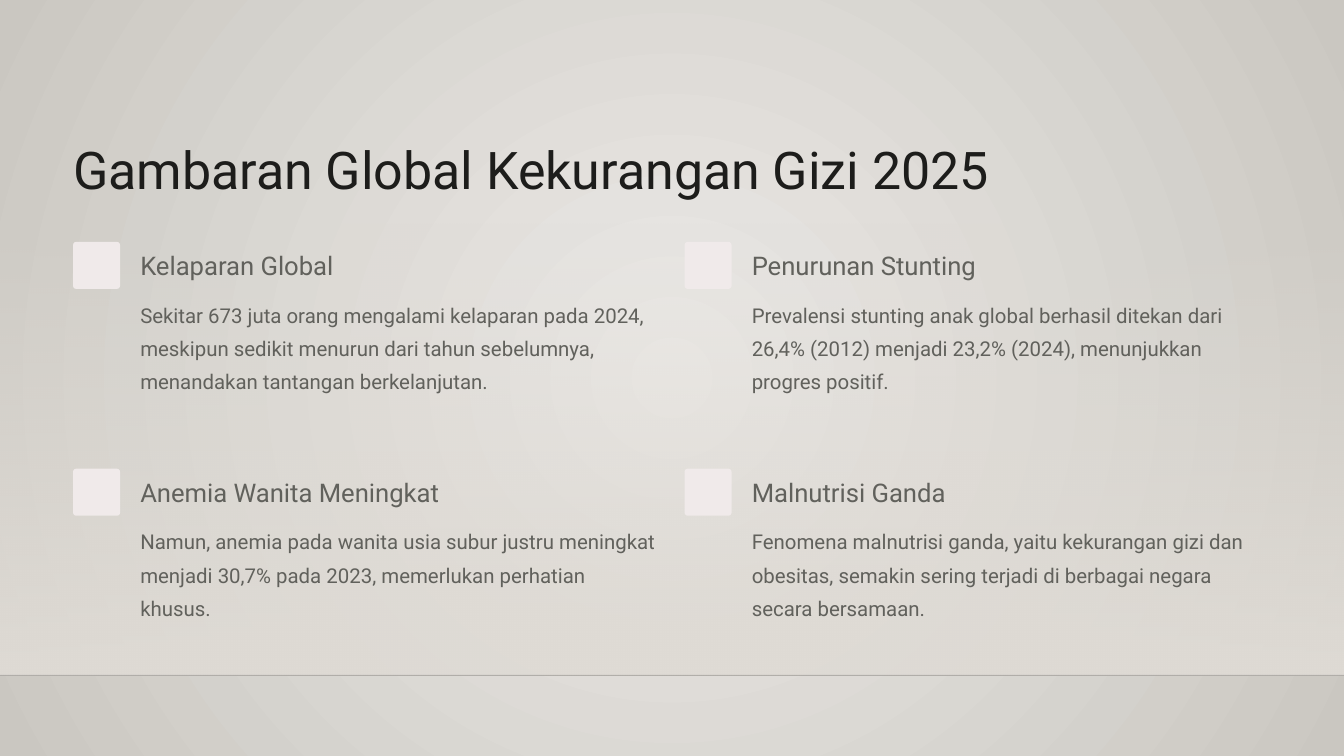
"""Build a slide with four facts about global malnutrition in a two by two grid."""
from pptx import Presentation, util as u
from pptx.dml.color import RGBColor
from pptx.enum import shapes, text
from pptx.oxml import parse_xml
from pptx.oxml.ns import nsdecls, qn

TITLE = "Gambaran Global Kekurangan Gizi 2025"
FACTS = [
    ("Kelaparan Global",
     "Sekitar 673 juta orang mengalami kelaparan pada 2024, meskipun sedikit menurun "
     "dari tahun sebelumnya, menandakan tantangan berkelanjutan."),
    ("Penurunan Stunting",
     "Prevalensi stunting anak global berhasil ditekan dari 26,4% (2012) menjadi "
     "23,2% (2024), menunjukkan progres positif."),
    ("Anemia Wanita Meningkat",
     "Namun, anemia pada wanita usia subur justru meningkat menjadi 30,7% pada 2023, "
     "memerlukan perhatian khusus."),
    ("Malnutrisi Ganda",
     "Fenomena malnutrisi ganda, yaitu kekurangan gizi dan obesitas, semakin sering "
     "terjadi di berbagai negara secara bersamaan."),
]
FONT, INK, GREY, TILE, SAND = "Roboto", "1D1D1B", "61615C", "F0EAEA", "DFDBD5"
WIDE, HIGH = 16, 9
LEFT, TOP = 0.87, 2.88
COL, ROW = 7.28, 2.7
SIDE, INDENT = 0.56, 0.8
FLOOR, FADE = 8.04, 2.65


def rgb(code):
    return RGBColor.from_string(code)


def box(*at):
    return [u.Inches(n) for n in at]


def blend(props, stops, shade):
    marks = "".join(
        f'<a:gs pos="{pos * 1000}"><a:srgbClr val="{code}">'
        f'<a:alpha val="{alpha * 1000}"/></a:srgbClr></a:gs>'
        for pos, code, alpha in stops)
    fill = parse_xml(f'<a:gradFill {nsdecls("a")} rotWithShape="1">'
                     f'<a:gsLst>{marks}</a:gsLst>{shade}</a:gradFill>')
    props.replace(props.find(qn("a:gradFill")), fill)


def write(shape, words, size, lead, code, wrap):
    frame = shape.text_frame
    frame.auto_size = text.MSO_AUTO_SIZE.NONE
    frame.word_wrap = wrap
    frame.vertical_anchor = text.MSO_ANCHOR.TOP
    frame.margin_left = frame.margin_right = frame.margin_top = frame.margin_bottom = 0
    para = frame.paragraphs[0]
    para.alignment = text.PP_ALIGN.LEFT
    para.line_spacing = u.Pt(lead)
    run = para.add_run()
    run.text = words
    run.font.size, run.font.name = u.Pt(size), FONT
    run.font.color.rgb = rgb(code)


def scene(slide):
    slide.background.fill.gradient()
    blend(slide.element.find(".//" + qn("p:bgPr")),
          [(0, "ECEAE7", 100), (100, "CAC7C1", 100)],
          '<a:path path="circle"><a:fillToRect l="50000" t="50000" r="50000" b="50000"/></a:path>')
    veil = slide.shapes.add_shape(shapes.MSO_SHAPE.RECTANGLE,
                                  *box(0, FADE, WIDE, FLOOR - FADE))
    veil.shadow.inherit = False
    veil.line.fill.background()
    veil.fill.gradient()
    blend(veil.element.spPr, [(0, SAND, 0), (100, SAND, 100)],
          '<a:lin ang="5400000" scaled="0"/>')
    edge = slide.shapes.add_connector(shapes.MSO_CONNECTOR.STRAIGHT,
                                      *box(0, FLOOR, WIDE, FLOOR))
    edge.line.width = u.Pt(1)
    edge.line.color.rgb = rgb("000001")
    props = edge.element.spPr
    props.find(".//" + qn("a:srgbClr")).append(
        parse_xml(f'<a:alpha {nsdecls("a")} val="20000"/>'))
    props.append(parse_xml(f'<a:effectLst {nsdecls("a")}/>'))


def fact(slide, left, top, head, body):
    tile = slide.shapes.add_shape(shapes.MSO_SHAPE.ROUNDED_RECTANGLE,
                                  *box(left, top, SIDE, SIDE))
    tile.adjustments[0] = 0.067
    tile.shadow.inherit = False
    tile.fill.solid()
    tile.fill.fore_color.rgb = rgb(TILE)
    tile.line.fill.background()
    left += INDENT
    label = slide.shapes.add_textbox(*box(left, top + 0.08, 4.1, 0.39))
    write(label, head, 22, 27.5, GREY, False)
    note = slide.shapes.add_textbox(*box(left, top + 0.62, 6.17, 1.19))
    write(note, body, 17.5, 28.5, GREY, True)


def main():
    deck = Presentation()
    deck.slide_width, deck.slide_height = box(WIDE, HIGH)
    slide = deck.slides.add_slide(deck.slide_layouts[5])
    scene(slide)
    title = slide.shapes.title
    title.left, title.top, title.width, title.height = box(LEFT, 1.61, 12.58, 0.78)
    write(title, TITLE, 44.5, 55.5, INK, False)
    for i, (head, body) in enumerate(FACTS):
        row, col = divmod(i, 2)
        fact(slide, LEFT + col * COL, TOP + row * ROW, head, body)
    deck.save("out.pptx")


if __name__ == "__main__":
    main()
